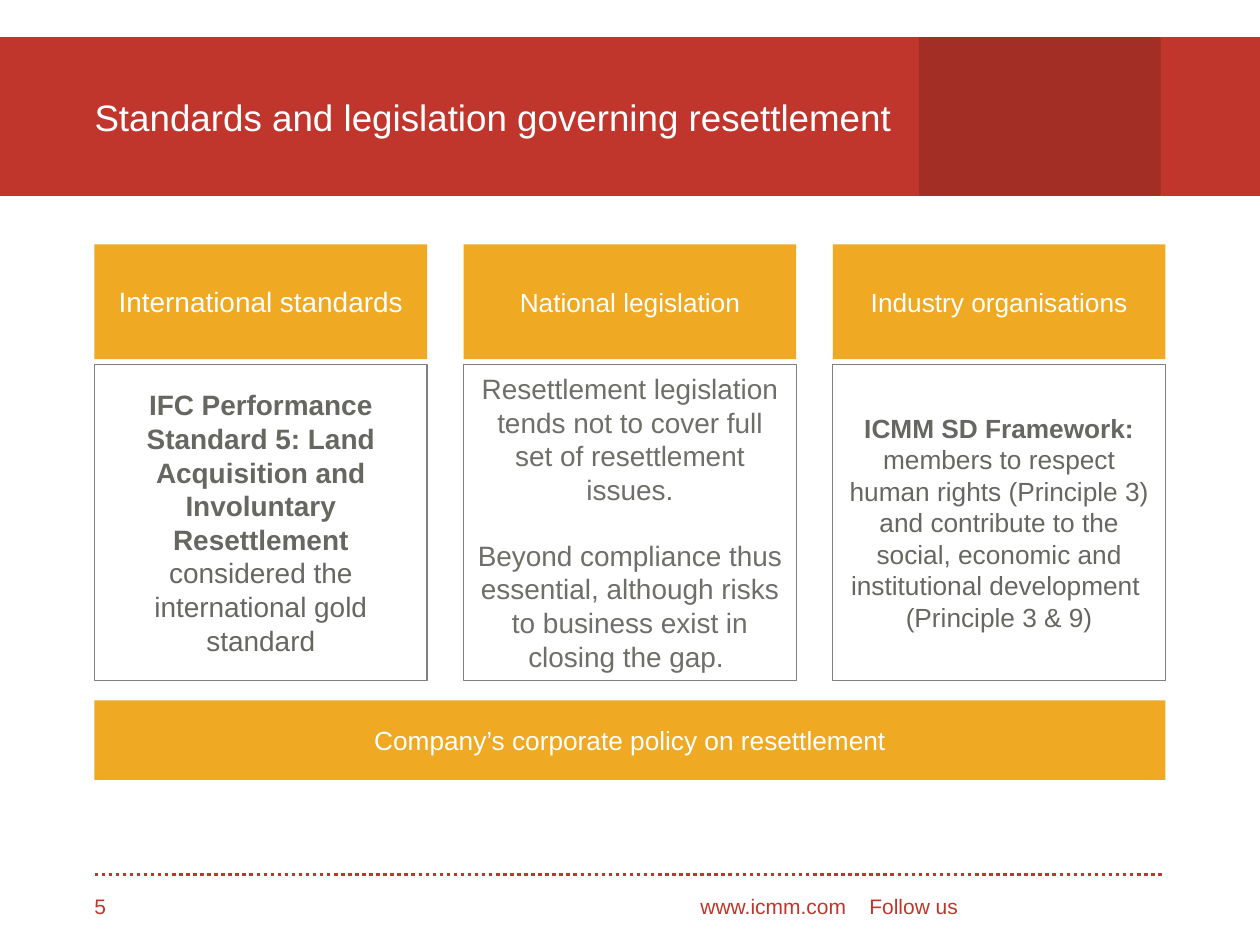
from lxml import etree
from pptx import Presentation
from pptx.dml.color import RGBColor
from pptx.enum import dml, shapes, text
from pptx.oxml import ns
from pptx.util import Inches, Pt

RED = RGBColor(0xC0, 0x36, 0x2C)
DARK_RED = RGBColor(0xA3, 0x2E, 0x26)
DARK_EDGE = RGBColor(0xA5, 0x33, 0x25)
AMBER = RGBColor(0xEF, 0xA9, 0x23)
WHITE = RGBColor(0xFF, 0xFF, 0xFF)
EDGE_GREY = RGBColor(0x80, 0x80, 0x80)
TEXT_GREY = RGBColor(0x66, 0x67, 0x60)
LIGHT_GREY = RGBColor(0x6E, 0x6F, 0x68)

TITLE = "Standards and legislation governing resettlement"
POLICY = "Company’s corporate policy on resettlement"
PAGE_NUMBER = "5"
FOOTER = "www.icmm.com\tFollow us"

COLUMNS = [
    {
        "heading": "International standards",
        "heading_size": 16,
        "body_size": 16,
        "color": TEXT_GREY,
        "body": [[
            ("IFC Performance Standard 5: Land Acquisition and Involuntary Resettlement ", True),
            ("considered the international gold standard", False),
        ]],
    },
    {
        "heading": "National legislation",
        "heading_size": 15,
        "body_size": 16,
        "color": LIGHT_GREY,
        "body": [
            [("Resettlement legislation tends not to cover full set of resettlement issues.", False)],
            [("Beyond compliance thus essential, although risks to business exist in closing the gap. ", False)],
        ],
        "paragraph_gap": 18.4,
    },
    {
        "heading": "Industry organisations",
        "heading_size": 15,
        "body_size": 15,
        "color": TEXT_GREY,
        "body": [
            [
                ("ICMM SD Framework: ", True),
                ("members to respect human rights (Principle 3) and contribute to the social, "
                 "economic and institutional development ", False),
            ],
            [("(Principle 3 & 9)", False)],
        ],
    },
]

LEFT, CONTENT_WIDTH, COLUMN_WIDTH = 0.75, 8.5, 2.64
COLUMN_STEP = (CONTENT_WIDTH - COLUMN_WIDTH) / (len(COLUMNS) - 1)
BAND_TOP, BAND_HEIGHT = 0.3, 1.25
FOOTER_TOP = 7.09


def write(shape, paragraphs, size, color, align=text.PP_ALIGN.CENTER,
          anchor=text.MSO_ANCHOR.MIDDLE, insets=(0.1, 0.05, 0.1, 0.05), gap=0, tab=None):
    frame = shape.text_frame
    frame.word_wrap = True
    frame.vertical_anchor = anchor
    for side, inset in zip(("left", "top", "right", "bottom"), insets):
        setattr(frame, f"margin_{side}", Inches(inset))
    for index, runs in enumerate(paragraphs):
        paragraph = frame.add_paragraph() if index else frame.paragraphs[0]
        paragraph.alignment = align
        if index and gap:
            paragraph.space_before = Pt(gap)
        if tab:
            tabs = etree.SubElement(paragraph._p.get_or_add_pPr(), ns.qn("a:tabLst"))
            etree.SubElement(tabs, ns.qn("a:tab"), pos=str(Inches(tab)), algn="l")
        for words, bold in runs:
            run = paragraph.add_run()
            run.text = words
            run.font.color.rgb = color
            font_format = {"name": "Arial", "size": Pt(size), "bold": bold}
            for name, value in font_format.items():
                setattr(run.font, name, value)


def add_box(slide, left, top, width, height, fill=None, line=None):
    shape = slide.shapes.add_shape(
        shapes.MSO_SHAPE.RECTANGLE, *map(Inches, (left, top, width, height)))
    shape.shadow.inherit = False
    if fill is None:
        shape.fill.background()
    else:
        shape.fill.solid()
        shape.fill.fore_color.rgb = fill
    if line is None:
        shape.line.fill.background()
    else:
        shape.line.color.rgb = line
        shape.line.width = Pt(0.75)
    return shape


def add_footer_text(slide, left, width, words, tab=None):
    box = slide.shapes.add_textbox(*map(Inches, (left, FOOTER_TOP, width, 0.3)))
    write(box, [[(words, False)]], 12, RED, text.PP_ALIGN.LEFT,
          text.MSO_ANCHOR.TOP, (0, 0, 0, 0), tab=tab)


def add_header(slide):
    add_box(slide, 7.29, BAND_TOP, 1.92, BAND_HEIGHT, DARK_RED, DARK_EDGE)
    add_box(slide, 9.22, BAND_TOP, 0.78, BAND_HEIGHT, RED, RED)
    title = add_box(slide, 0, BAND_TOP, 7.29, BAND_HEIGHT, RED, RED)
    write(title, [[(TITLE, False)]], 21, WHITE, text.PP_ALIGN.LEFT,
          insets=(LEFT, 0.05, 0.1, 0.05))


def add_columns(slide):
    for index, column in enumerate(COLUMNS):
        left = LEFT + index * COLUMN_STEP
        heading = add_box(slide, left, 1.94, COLUMN_WIDTH, 0.91, AMBER)
        write(heading, [[(column["heading"], False)]], column["heading_size"], WHITE)
        body = add_box(slide, left, 2.89, COLUMN_WIDTH, 2.51, line=EDGE_GREY)
        write(body, column["body"], column["body_size"], column["color"],
              gap=column.get("paragraph_gap", 0))
    policy = add_box(slide, LEFT, 5.56, CONTENT_WIDTH, 0.63, AMBER)
    write(policy, [[(POLICY, False)]], 15, WHITE)


def add_footer(slide):
    rule = slide.shapes.add_connector(
        shapes.MSO_CONNECTOR.STRAIGHT, *map(Inches, (LEFT, 6.94, 9.22, 6.94)))
    rule.line.color.rgb = RED
    rule.line.width = Pt(2)
    rule.line.dash_style = dml.MSO_LINE.ROUND_DOT
    etree.SubElement(rule._element.spPr, ns.qn("a:effectLst"))
    add_footer_text(slide, LEFT, 2.33, PAGE_NUMBER)
    add_footer_text(slide, 5.56, 2.2, FOOTER, tab=1.34)


def main():
    presentation = Presentation()
    presentation.slide_width = Inches(10)
    presentation.slide_height = Inches(7.5)
    slide = presentation.slides.add_slide(presentation.slide_layouts[6])
    add_header(slide)
    add_columns(slide)
    add_footer(slide)
    presentation.save("out.pptx")


if __name__ == "__main__":
    main()
